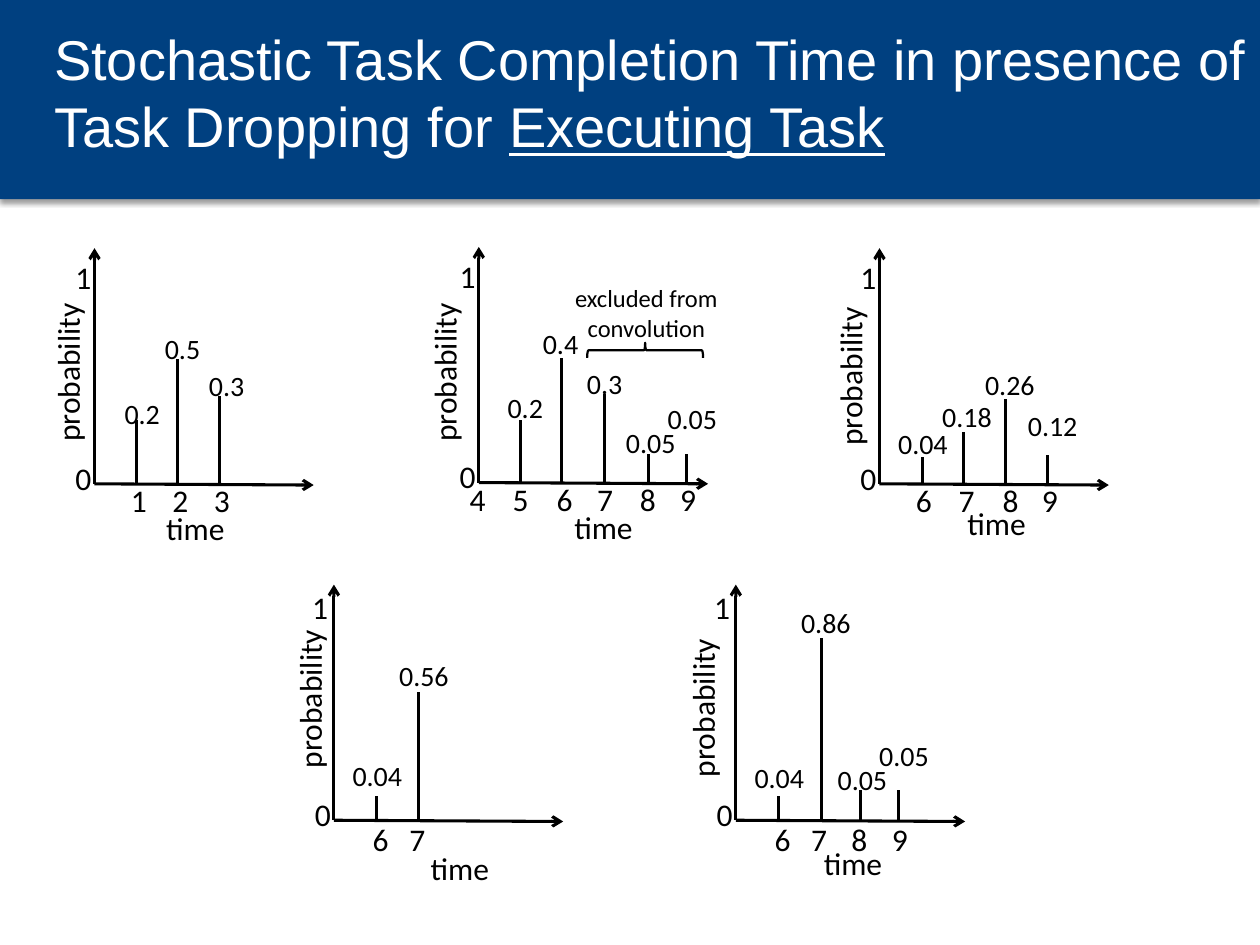
from collections import namedtuple

from lxml.etree import SubElement
from pptx import Presentation
from pptx.dml.color import RGBColor
from pptx.enum.shapes import MSO_CONNECTOR, MSO_SHAPE
from pptx.enum.text import MSO_ANCHOR, MSO_AUTO_SIZE, PP_ALIGN
from pptx.oxml.ns import qn
from pptx.util import Inches, Pt

COLORS = {"band": "004080", "ink": "000000", "title": "FFFFFF"}

# Offsets (dx, dy) are inches from the origin of the plot.
Stem = namedtuple("Stem", "tick x height tick_x value value_at")
Plot = namedtuple("Plot", "origin width stems probability_at time_at one_at tick_dy")

PLOTS = [
    Plot((0.75, 3.84), 1.74, [
        Stem("1", 0.33, 0.51, 0.19, "0.2", (0.14, -0.74)),
        Stem("2", 0.66, 0.99, 0.52, "0.5", (0.46, -1.26)),
        Stem("3", 0.99, 0.70, 0.85, "0.3", (0.81, -0.96)),
    ], (-0.87, -1.09), (0.47, 0.15), (-0.25, -1.84), -0.07),
    Plot((3.8, 3.83), 1.82, [
        Stem("4", 0, 0, -0.17, "", None),
        Stem("5", 0.33, 0.50, 0.17, "0.2", (0.13, -0.78)),
        Stem("6", 0.66, 0.99, 0.52, "0.4", (0.41, -1.29)),
        Stem("7", 1.00, 0.70, 0.84, "0.3", (0.76, -0.97)),
        Stem("8", 1.35, 0.23, 1.18, "0.05", (1.07, -0.50)),
        Stem("9", 1.65, 0.23, 1.50, "0.05", (1.40, -0.69)),
    ], (-0.93, -1.08), (0.66, 0.15), (-0.25, -1.84), -0.07),
    Plot((6.98, 3.84), 1.82, [
        Stem("6", 0.34, 0.21, 0.19, "0.04", (0.05, -0.50)),
        Stem("7", 0.67, 0.41, 0.53, "0.18", (0.40, -0.72)),
        Stem("8", 1.00, 0.67, 0.88, "0.26", (0.74, -0.97)),
        Stem("9", 1.33, 0.23, 1.19, "0.12", (1.08, -0.65)),
    ], (-0.89, -1.06), (0.60, 0.11), (-0.25, -1.84), -0.07),
    Plot((5.84, 6.51), 1.82, [
        Stem("6", 0.34, 0.19, 0.21, "0.04", (0.05, -0.52)),
        Stem("7", 0.68, 1.45, 0.50, "0.86", (0.42, -1.75)),
        Stem("8", 0.99, 0.24, 0.82, "0.05", (0.71, -0.51)),
        Stem("9", 1.29, 0.24, 1.14, "0.05", (1.04, -0.70)),
    ], (-0.92, -1.10), (0.60, 0.14), (-0.27, -1.89), -0.05),
    Plot((2.65, 6.51), 1.82, [
        Stem("6", 0.34, 0.19, 0.21, "0.04", (0.05, -0.54)),
        Stem("7", 0.67, 1.02, 0.50, "0.56", (0.42, -1.33)),
    ], (-0.85, -1.17), (0.67, 0.18), (-0.27, -1.89), -0.05),
]


def rgb(name):
    return RGBColor.from_string(COLORS[name])


class SlideBuilder:
    font = "Calibri"
    axis_height = 1.87

    def __init__(self, prs):
        self.slide = prs.slides.add_slide(prs.slide_layouts[5])
        self.shapes = self.slide.shapes

    def title(self, plain, underlined):
        sp = self.slide.shapes.title
        sp.left, sp.top, sp.width, sp.height = map(Inches, (0.33, 0.33, 9.67, 0.8))
        tf = sp.text_frame
        tf.auto_size, tf.vertical_anchor = MSO_AUTO_SIZE.NONE, MSO_ANCHOR.MIDDLE
        tf.text = plain
        p = tf.paragraphs[0]
        p.alignment = PP_ALIGN.LEFT
        r = p.add_run()
        r.text = underlined
        r.font.underline = True
        for r in p.runs:
            r.font.name, r.font.size = "Arial", Pt(32)
            r.font.color.rgb = rgb("title")

    def band(self, width, height):
        """Draw the shadowed header band behind the title."""
        sp = self.slide.shapes.add_shape(MSO_SHAPE.RECTANGLE, 0, 0, Inches(width), Inches(height))
        sp.fill.solid()
        sp.fill.fore_color.rgb = rgb("band")
        sp.line.fill.background()
        sp.shadow.inherit = False
        effects = sp.element.spPr.find(qn("a:effectLst"))
        shadow = SubElement(effects, qn("a:outerShdw"), blurRad=str(Pt(3.1)),
                            dist=str(Pt(1.6)), dir="5400000", rotWithShape="0")
        color = SubElement(shadow, qn("a:srgbClr"), val=COLORS["ink"])
        SubElement(color, qn("a:alpha"), val="38000")
        self.slide.shapes.title.element.addprevious(sp.element)

    def line(self, x1, y1, x2, y2, arrow=False):
        c = self.shapes.add_connector(MSO_CONNECTOR.STRAIGHT, *map(Inches, (x1, y1, x2, y2)))
        c.line.color.rgb, c.line.width = rgb("ink"), Pt(1.75)
        if arrow:
            SubElement(c.line._get_or_add_ln(), qn("a:tailEnd"), type="arrow")
        SubElement(c.element.spPr, qn("a:effectLst"))

    def text(self, text, x, y, w, h=0.4, size=18, rotation=0, wrap=False):
        sp = self.shapes.add_textbox(*map(Inches, (x, y, w, h)))
        sp.rotation = rotation
        tf = sp.text_frame
        tf.word_wrap, tf.auto_size = wrap, MSO_AUTO_SIZE.SHAPE_TO_FIT_TEXT
        tf.text = text
        p = tf.paragraphs[0]
        p.alignment = PP_ALIGN.CENTER if wrap else PP_ALIGN.LEFT
        font = p.runs[0].font
        font.name, font.size, font.color.rgb = self.font, Pt(size), rgb("ink")

    def brace(self, x, y, w, h):
        sp = self.shapes.add_shape(MSO_SHAPE.LEFT_BRACE, *map(Inches, (x, y, w, h)))
        sp.rotation = 90
        sp.fill.background()
        sp.line.color.rgb, sp.line.width = rgb("ink"), Pt(1.25)
        sp.shadow.inherit = False

    def plot(self, plot):
        """Draw one grouped probability plot: axes, labels and stems."""
        self.shapes = self.slide.shapes.add_group_shape().shapes
        x0, y0 = plot.origin

        def label(text, at, w, **style):
            self.text(text, x0 + at[0], y0 + at[1], w, **style)

        self.line(x0, y0, x0 + plot.width, y0 + 0.01, arrow=True)
        self.line(x0, y0, x0, y0 - self.axis_height, arrow=True)
        label("probability", plot.probability_at, 1.31, rotation=270)
        label("time", plot.time_at, 0.67)
        label("1", plot.one_at, 0.33)
        label("0", (-0.25, -0.25), 0.33)
        for stem in plot.stems:
            label(stem.tick, (stem.tick_x, plot.tick_dy), 0.33)
            if stem.value:
                x = x0 + stem.x
                self.line(x, y0, x, y0 - stem.height)
                label(stem.value, stem.value_at, 0.49 if len(stem.value) == 3 else 0.6,
                      h=0.37, size=16)
        self.shapes = self.slide.shapes


def main():
    prs = Presentation()
    prs.slide_width, prs.slide_height = Inches(10), Inches(7.5)
    s = SlideBuilder(prs)
    s.title("Stochastic Task Completion Time in presence of Task Dropping for ",
            "Executing Task")
    s.band(10, 1.58)
    for plot in PLOTS:
        s.plot(plot)
    s.text("excluded from convolution", 4.44, 2.2, 1.38, h=0.57, size=14, wrap=True)
    s.brace(5.06, 2.32, 0.12, 0.92)
    prs.save("out.pptx")


if __name__ == "__main__":
    main()
